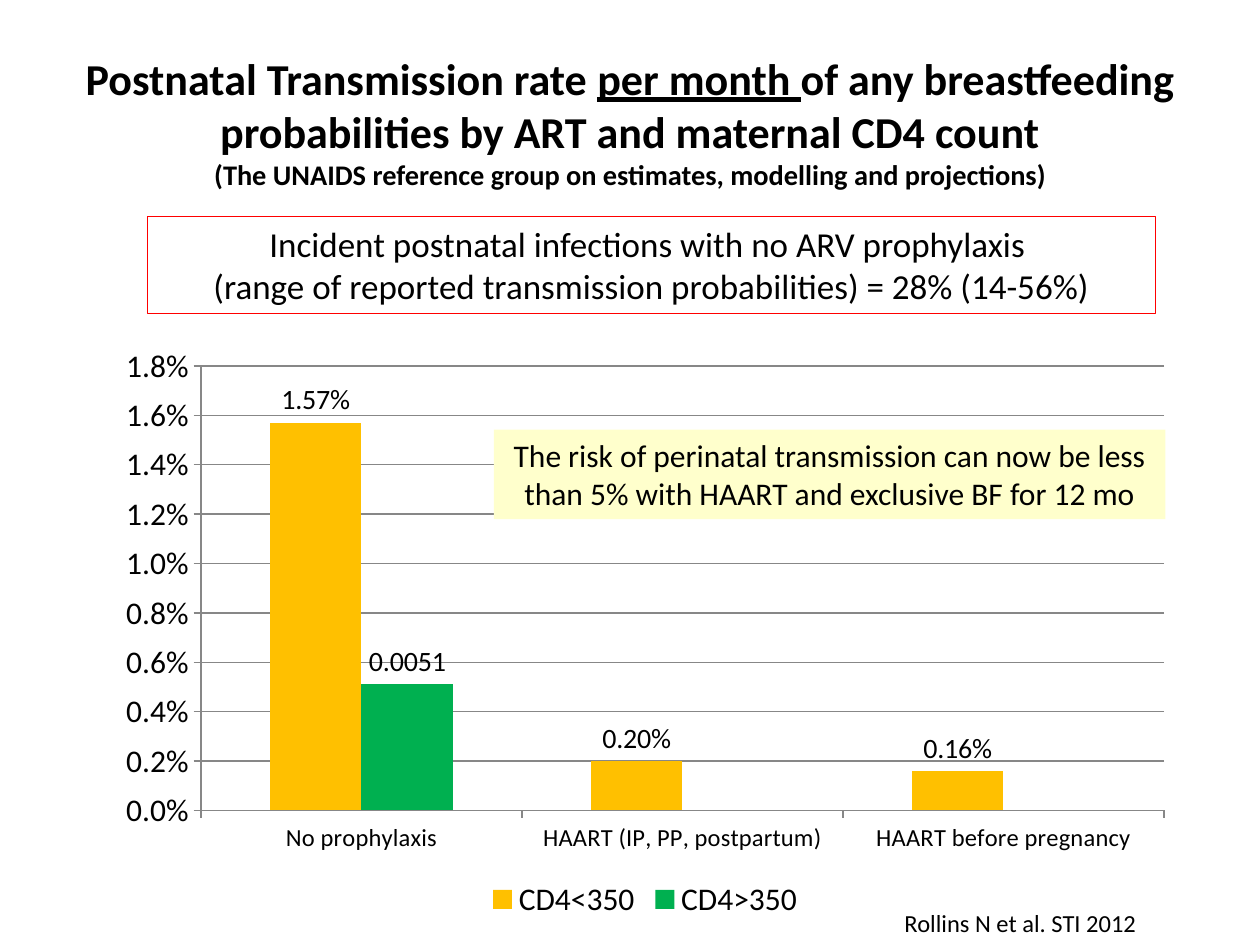
"""Build the slide on postnatal transmission rates by ART and maternal CD4 count."""
from dataclasses import dataclass

from pptx import Presentation
from pptx.chart.data import CategoryChartData
from pptx.dml.color import RGBColor as RGB
from pptx.enum.chart import XL_CHART_TYPE as ChartType
from pptx.enum.chart import XL_LABEL_POSITION as LabelPos
from pptx.enum.chart import XL_LEGEND_POSITION as LegendPos
from pptx.enum.chart import XL_TICK_MARK as Tick
from pptx.enum.shapes import MSO_SHAPE as Shape
from pptx.enum.text import MSO_ANCHOR as Anchor
from pptx.enum.text import PP_ALIGN as Align
from pptx.util import Inches, Pt


@dataclass(frozen=True)
class Theme:
    font: str = "Calibri"
    text: RGB = RGB(0x00, 0x00, 0x00)
    grid: RGB = RGB(0x87, 0x87, 0x87)
    low_cd4: RGB = RGB(0xFF, 0xC0, 0x00)
    high_cd4: RGB = RGB(0x00, 0xB0, 0x50)
    border: RGB = RGB(0xFF, 0x00, 0x00)
    note: RGB = RGB(0xFF, 0xFF, 0xCC)
    title: float = 25.2
    subtitle: float = 16.2
    box: float = 20
    body: float = 18
    label: float = 16
    small: float = 14


T = Theme()


def style(font, size):
    font.name = T.font
    font.size = Pt(size)
    font.color.rgb = T.text


def add_run(p, text, size):
    r = p.add_run()
    r.text = text
    style(r.font, size)
    return r


prs = Presentation()
prs.slide_width, prs.slide_height = Inches(10), Inches(7.5)
s = prs.slides.add_slide(prs.slide_layouts[5])

title = s.shapes.title
title.left, title.top, title.width, title.height = map(Inches, (0.5, 0.42, 9, 1.08))
tf = title.text_frame
tf.vertical_anchor = Anchor.MIDDLE
p = tf.paragraphs[0]
p.alignment = Align.CENTER
for text, size, underline in (
    ("Postnatal Transmission rate ", T.title, False),
    ("per month ", T.title, True),
    ("of any breastfeeding probabilities by ART and maternal CD4 count", T.title, False),
):
    r = add_run(p, text, size)
    r.font.bold, r.font.underline = True, underline
p.add_line_break()
r = add_run(p, "(The UNAIDS reference group on estimates, modelling and projections)", T.subtitle)
r.font.bold = True

data = CategoryChartData()
data.categories = ["No prophylaxis", "HAART (IP, PP, postpartum)", "HAART before pregnancy"]
data.add_series("CD4<350", (0.0157, 0.002, 0.0016))
data.add_series("CD4>350", (0.0051, None, None))
chart = s.shapes.add_chart(
    ChartType.COLUMN_CLUSTERED, Inches(0.83), Inches(2.66), Inches(8.58), Inches(4.68), data
).chart
style(chart.font, T.body)
chart.has_title = False
chart.has_legend = True
chart.legend.position = LegendPos.BOTTOM
chart.legend.include_in_layout = False

plot = chart.plots[0]
plot.gap_width = 150
plot.overlap = 0
plot.vary_by_categories = False
for series, color, number_format in zip(
    plot.series, (T.low_cd4, T.high_cd4), ("0.00%", "General")
):
    series.format.fill.solid()
    series.format.fill.fore_color.rgb = color
    labels = series.data_labels
    labels.show_value = True
    labels.number_format = number_format
    labels.number_format_is_linked = False
    labels.position = LabelPos.OUTSIDE_END
    style(labels.font, T.label)

cat_axis, val_axis = chart.category_axis, chart.value_axis
for axis, size in ((cat_axis, T.small), (val_axis, T.body)):
    axis.major_tick_mark = Tick.OUTSIDE
    axis.minor_tick_mark = Tick.NONE
    axis.format.line.color.rgb = T.grid
    style(axis.tick_labels.font, size)
val_axis.minimum_scale, val_axis.maximum_scale, val_axis.major_unit = 0, 0.018, 0.002
val_axis.tick_labels.number_format = "0.0%"
val_axis.tick_labels.number_format_is_linked = False
val_axis.has_major_gridlines = True
val_axis.major_gridlines.format.line.color.rgb = T.grid

incident = s.shapes.add_shape(Shape.RECTANGLE, Inches(1.17), Inches(1.72), Inches(8), Inches(0.77))
incident.fill.background()
incident.line.color.rgb = T.border
incident.line.width = Pt(0.25)
source = s.shapes.add_textbox(Inches(7.08), Inches(7.16), Inches(2.31), Inches(0.34))
risk = s.shapes.add_shape(Shape.RECTANGLE, Inches(3.92), Inches(3.41), Inches(5.33), Inches(0.71))
risk.fill.solid()
risk.fill.fore_color.rgb = T.note
risk.line.fill.background()

for sp, lines, size, align, wrap in (
    (incident, ("Incident postnatal infections with no ARV prophylaxis ",
                "(range of reported transmission probabilities) = 28% (14-56%)"),
     T.box, Align.CENTER, True),
    (source, ("Rollins N et al. STI 2012",), T.small, Align.LEFT, False),
    (risk, ("The risk of perinatal transmission can now be less than 5% "
            "with HAART and exclusive BF for 12 mo",), T.body, Align.CENTER, True),
):
    sp.shadow.inherit = False
    tf = sp.text_frame
    tf.word_wrap = wrap
    tf.vertical_anchor = Anchor.TOP
    for i, line in enumerate(lines):
        p = tf.add_paragraph() if i else tf.paragraphs[0]
        p.alignment = align
        add_run(p, line, size)

prs.save("out.pptx")
